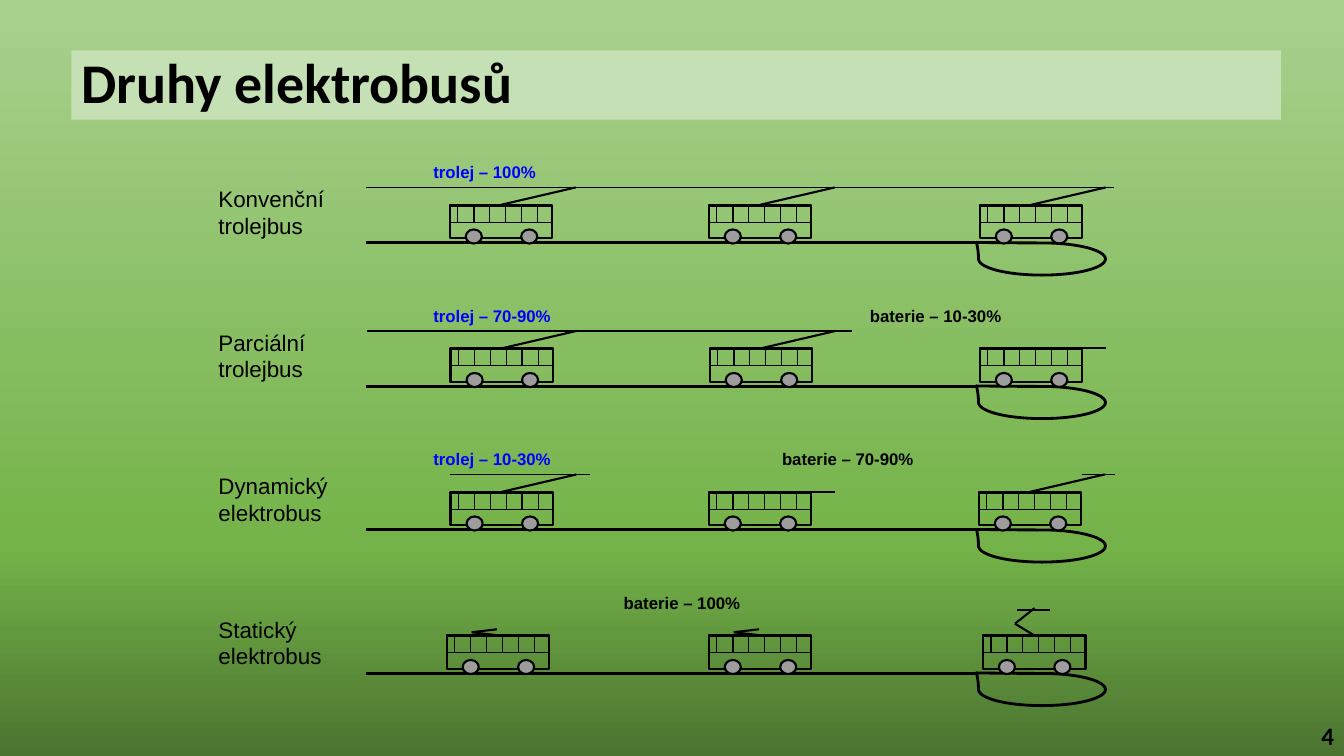
from itertools import pairwise

from lxml.etree import SubElement
from pptx import Presentation
from pptx.dml.color import RGBColor
from pptx.enum.shapes import MSO_CONNECTOR as LINK, MSO_SHAPE as SHAPE
from pptx.enum.text import MSO_ANCHOR as ANCHOR, PP_ALIGN as ALIGN
from pptx.oxml.ns import qn
from pptx.util import Pt

COLORS = {"ink": "000000", "trolley": "0000FF", "wheel": "9D9D9D", "band": "C5E0B4",
          "ground": "4B7430", "grass": "74B349", "sky": "A9D18E"}
BACKDROP = [(0, "ground"), (28, "grass"), (100, "sky")]

RAISED = [(90, -12.4)]
LOWERED = [(90, 0)]
FOLDED = [(18, -2.2), (36, -4.3)]
PANTOGRAPH = [(23, -8.3), (37, -19.4)]

ROW_PITCH = 102.5
WIRE = 21.6
ROWS = [
    {"name": "Konvenční\ntrolejbus",
     "captions": [(153.4, "trolej – 100%", "trolley")],
     "wires": [(112.4, 646.6, WIRE)],
     "buses": [(172.2, RAISED), (357.2, RAISED), (550.8, RAISED)]},
    {"name": "Parciální\ntrolejbus",
     "captions": [(153.4, "trolej – 70-90%", "trolley"), (465.2, "baterie – 10-30%", "ink")],
     "wires": [(113, 459.4, WIRE)],
     "buses": [(172.8, RAISED), (357.9, RAISED), (550.8, LOWERED)]},
    {"name": "Dynamický elektrobus",
     "captions": [(153.4, "trolej – 10-30%", "trolley"), (402.5, "baterie – 70-90%", "ink")],
     "wires": [(172.1, 272.2, WIRE), (623.6, 647.3, WIRE)],
     "buses": [(172.8, RAISED), (357.2, LOWERED), (550.1, RAISED)]},
    {"name": "Statický elektrobus",
     "captions": [(289.4, "baterie – 100%", "ink")],
     "wires": [(577.5, 601.2, 16)],
     "buses": [(170, FOLDED), (357.2, FOLDED), (553, PANTOGRAPH)]},
]


def color(name):
    """Return the named colour."""
    return RGBColor.from_string(COLORS[name])


def add_text(shapes, box, text, size, font="Arial", ink="ink", bold=False,
             anchor=ANCHOR.TOP, align=ALIGN.LEFT):
    """Add a wrapped text box, one paragraph per line of text."""
    label = shapes.add_textbox(*map(Pt, box))
    frame = label.text_frame
    frame.word_wrap, frame.vertical_anchor = True, anchor
    frame.text = text
    for paragraph in frame.paragraphs:
        paragraph.alignment = align
        look = {"size": Pt(size), "name": font, "bold": bold}
        for key, value in look.items():
            setattr(paragraph.font, key, value)
        paragraph.font.color.rgb = color(ink)
    return label


def add_outline(shapes, kind, box, weight, fill=None):
    """Add a black-outlined shape, hollow unless a fill is named."""
    shape = shapes.add_shape(kind, *map(Pt, box))
    shape.shadow.inherit = False
    shape.line.color.rgb, shape.line.width = color("ink"), Pt(weight)
    if fill:
        shape.fill.solid()
        shape.fill.fore_color.rgb = color(fill)
    else:
        shape.fill.background()
    return shape


def add_line(shapes, start, end, weight):
    """Add a straight black line without shadow."""
    line = shapes.add_connector(LINK.STRAIGHT, *map(Pt, (*start, *end)))
    line.line.color.rgb, line.line.width = color("ink"), Pt(weight)
    SubElement(line._element.spPr, qn("a:effectLst"))
    return line


def add_bus(slide, left, top, collector):
    """Draw a grouped bus with its current collector on the roof."""
    bus = slide.shapes.add_group_shape().shapes
    width = 73.4
    body = add_outline(bus, SHAPE.RECTANGLE, (left, top, width, 23.8), 1.5)
    for wheel in (11.5, 51.1):
        add_outline(bus, SHAPE.OVAL, (left + wheel, top + 17.6, 11.5, 10.1), 1.5, "wheel")
    add_outline(bus, SHAPE.RECTANGLE, (left, top + 1, width, 11.5), 1)
    for window in range(3):
        add_outline(bus, SHAPE.RECTANGLE, (left + 5.8 + 22.7 * window, top + 1, 11.5, 11.5), 1)
    joints = [(left + width / 2, top)] + [(left + x, top + y) for x, y in collector]
    arms = [add_line(bus, start, end, 1.5) for start, end in pairwise(joints)]
    arms[0].begin_connect(body, 0)


def add_row(slide, left, top, row):
    """Draw one kind of electric bus: name, captions, wires, road, loop and buses."""
    shapes = slide.shapes
    road = top + 61.2
    add_text(shapes, (left, top + 16.4, 94, 46), row["name"], 16)
    for x, text, ink in row["captions"]:
        add_text(shapes, (left + x, top, 165, 21.6), text, 12, ink=ink, bold=True)
    for start, end, y in row["wires"]:
        add_line(shapes, (left + start, top + y), (left + end, top + y), 1)
    add_line(shapes, (left + 112.8, road), (left + 549, road), 2)
    loop = add_outline(shapes, SHAPE.TEAR, (left + 550, road, 90.7, 23), 2)
    loop.adjustments[0] = 1.032
    loop._element.spPr.xfrm.set("flipH", "1")
    for x, collector in row["buses"]:
        add_bus(slide, left + x, top + 34, collector)


def add_backdrop(slide):
    """Fill the background with the vertical green gradient."""
    fill = slide.background.fill
    fill.gradient()
    fill.gradient_angle = 90
    stops = slide.element.find(".//" + qn("a:gsLst"))
    for stop in list(stops):
        stops.remove(stop)
    for percent, name in BACKDROP:
        stop = SubElement(stops, qn("a:gs"), pos=str(percent * 1000))
        SubElement(stop, qn("a:srgbClr"), val=COLORS[name])


def add_heading(slide, box):
    """Add the title on its light band."""
    heading = add_text(slide.shapes, box, "Druhy elektrobusů", 40, "Calibri",
                       bold=True, anchor=ANCHOR.MIDDLE)
    heading.fill.solid()
    heading.fill.fore_color.rgb = color("band")
    heading.text_frame.paragraphs[0].line_spacing = 0.9


def main():
    """Build the slide and save it."""
    deck = Presentation()
    deck.slide_width, deck.slide_height = Pt(960), Pt(540)
    slide = deck.slides.add_slide(deck.slide_layouts[6])
    add_backdrop(slide)
    add_heading(slide, (51, 36, 864, 49.5))
    for index, row in enumerate(ROWS):
        add_row(slide, 149, 112.3 + ROW_PITCH * index, row)
    add_text(slide.shapes, (744, 511.2, 216, 28.8), "4", 18, "Calibri", bold=True,
             anchor=ANCHOR.MIDDLE, align=ALIGN.RIGHT)
    deck.save("out.pptx")


if __name__ == "__main__":
    main()
